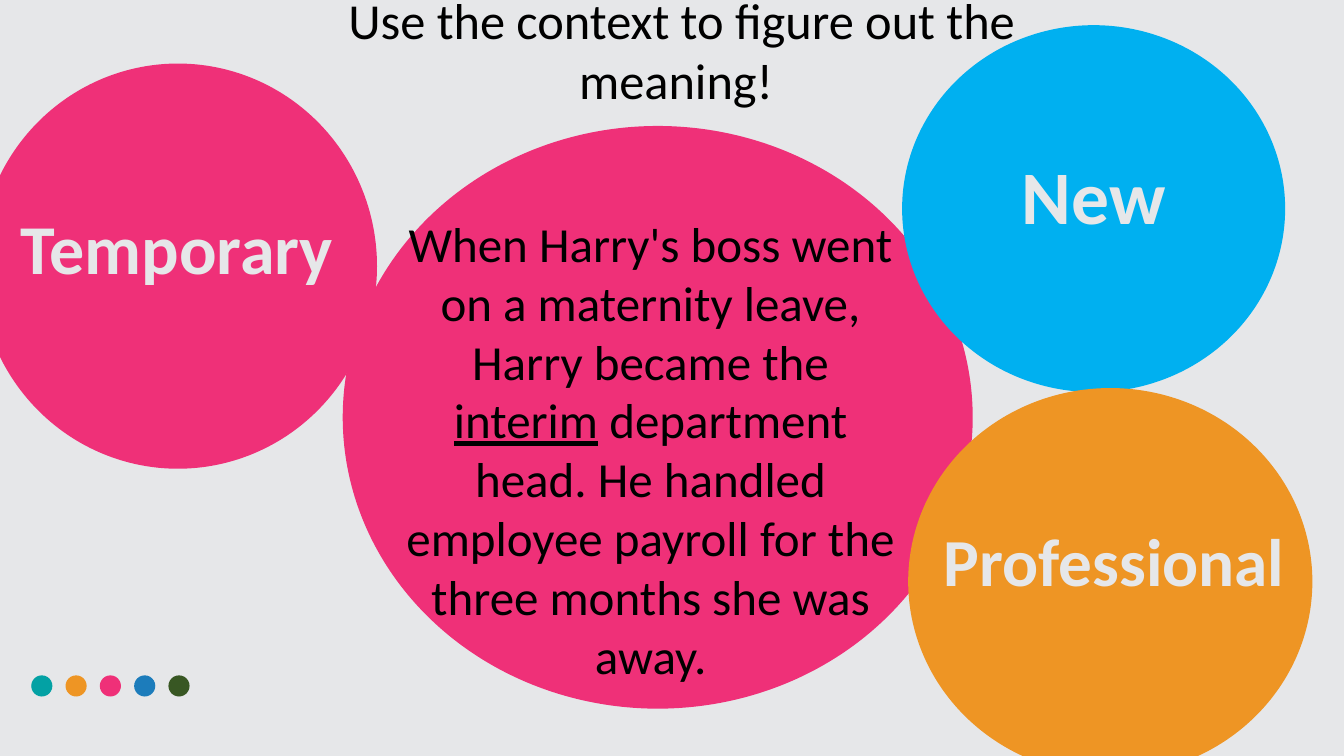
"""Build a vocabulary slide that asks for the meaning of a word from its context."""
from pptx import Presentation
from pptx.dml.color import RGBColor
from pptx.enum.shapes import MSO_SHAPE
from pptx.enum.text import MSO_ANCHOR, MSO_AUTO_SIZE, PP_ALIGN
from pptx.util import Pt

OVAL = MSO_SHAPE.OVAL
TOP = MSO_ANCHOR.TOP
NO_FIT = MSO_AUTO_SIZE.NONE
CENTER = PP_ALIGN.CENTER

COLORS = {
    "background": "E6E7E9",
    "text": "000000",
    "teal": "03A1A4",
    "orange": "EE9524",
    "pink": "EF3078",
    "blue": "1C7CBB",
    "green": "385723",
    "sky": "00B0F0",
}
FONT = "Calibri"
SLIDE_SIZE = (960, 540)

QUESTION = "Use the context to figure out the meaning! "
QUESTION_BOX = (180.7, -11.5, 612.7, 94.3)

PASSAGE = [
    ("When Harry's boss went on a maternity leave, Harry became the ", False),
    ("interim", True),
    (" department head. He handled employee payroll for the three months she was away.", False),
]
PASSAGE_CIRCLE = (244.8, 90, 450, 416.2)
PASSAGE_BOX = (275.8, 149, 378, 370)

ANSWERS = [
    ("New", "sky", 54, (644.4, 18, 273.6, 262.1), (656.6, 103, 249.1, 89.3)),
    ("Professional", "orange", 48, (648.7, 277.2, 288.7, 276.5), (664.6, 367.2, 262.8, 130.3)),
    ("Temporary", "pink", 50, (-15.1, 45.4, 284.4, 289.4), (-15.8, 142.6, 284.4, 74.2)),
]

DOTS = ["teal", "orange", "pink", "blue", "green"]
DOT_LEFT, DOT_TOP, DOT_SIZE, DOT_STEP = 22.3, 482.4, 15.1, 24.5


def rgb(color):
    return RGBColor.from_string(COLORS[color])


def points(box):
    return [Pt(length) for length in box]


def add_circle(slide, box, color):
    circle = slide.shapes.add_shape(OVAL, *points(box))
    circle.shadow.inherit = False
    circle.fill.solid()
    circle.fill.fore_color.rgb = rgb(color)
    circle.line.fill.background()


def write(holder, runs, *, size, color="text", bold=False):
    frame = holder.text_frame
    frame.word_wrap = True
    frame.auto_size = NO_FIT
    frame.vertical_anchor = TOP
    paragraph = frame.paragraphs[0]
    paragraph.alignment = CENTER
    for text, underlined in runs:
        run = paragraph.add_run()
        run.text = text
        run.font.name = FONT
        run.font.size = Pt(size)
        run.font.bold = bold
        run.font.underline = underlined
        run.font.color.rgb = rgb(color)


def main():
    deck = Presentation()
    deck.slide_width, deck.slide_height = points(SLIDE_SIZE)
    slide = deck.slides.add_slide(deck.slide_layouts[5])
    slide.background.fill.solid()
    slide.background.fill.fore_color.rgb = rgb("background")

    question = slide.shapes.title
    question.left, question.top, question.width, question.height = points(QUESTION_BOX)
    write(question, [(QUESTION, False)], size=36)

    for index, color in enumerate(DOTS):
        add_circle(slide, (DOT_LEFT + index * DOT_STEP, DOT_TOP, DOT_SIZE, DOT_SIZE), color)

    add_circle(slide, PASSAGE_CIRCLE, "pink")
    write(slide.shapes.add_textbox(*points(PASSAGE_BOX)), PASSAGE, size=35)

    for answer, color, size, circle_box, label_box in ANSWERS:
        add_circle(slide, circle_box, color)
        label = slide.shapes.add_textbox(*points(label_box))
        write(label, [(answer, False)], size=size, color="background", bold=True)

    deck.save("out.pptx")


if __name__ == "__main__":
    main()
